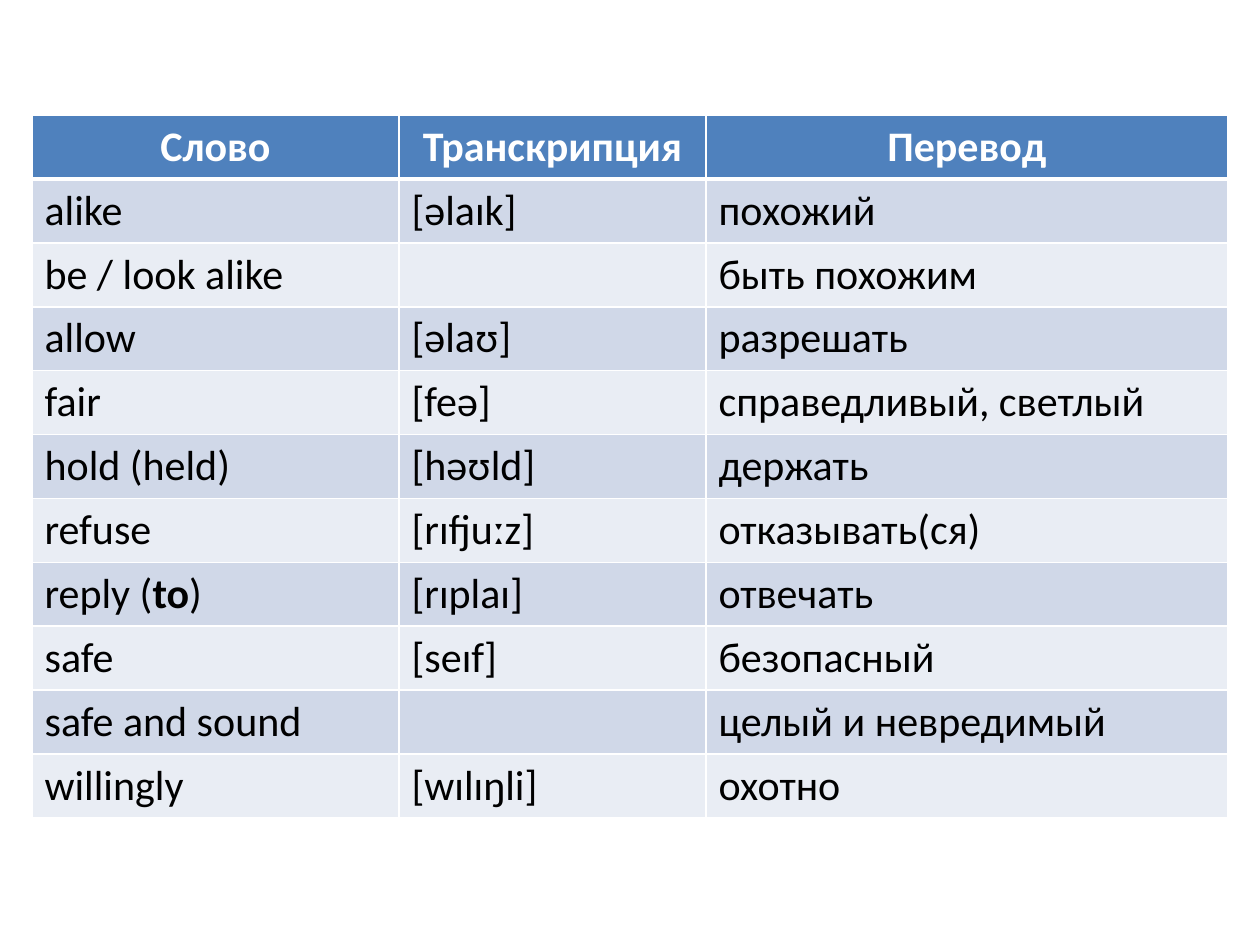
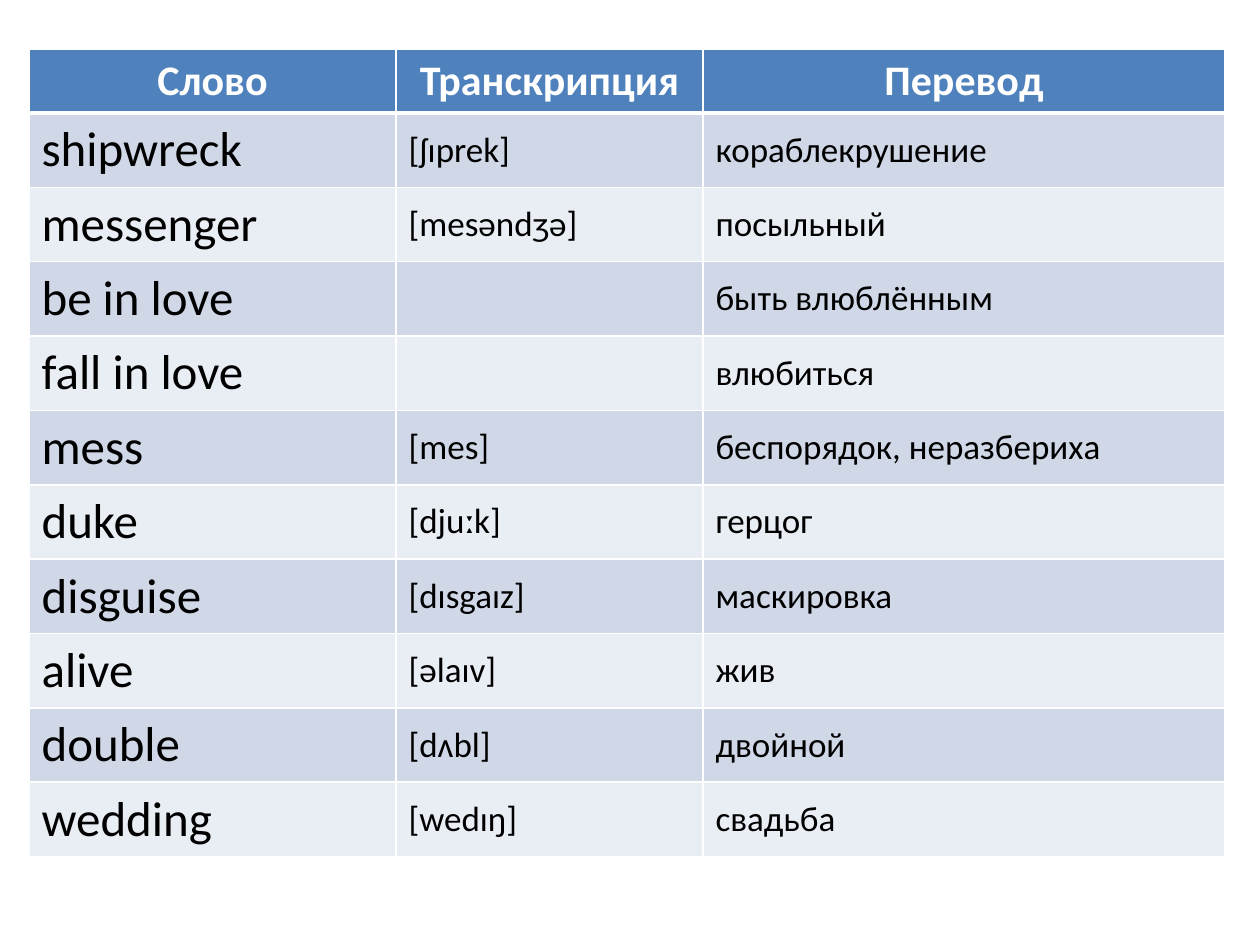
from dataclasses import dataclass

from lxml.etree import SubElement
from pptx import Presentation
from pptx.dml.color import RGBColor as RGB
from pptx.enum.text import MSO_ANCHOR as ANCHOR, PP_ALIGN as ALIGN
from pptx.oxml.ns import qn
from pptx.util import Pt

PX = 914400 // 126
COLUMNS = (367, 307, 522)
HEADINGS = ("Слово", "Транскрипция", "Перевод")
HEADER_HEIGHT = 64


@dataclass(frozen=True)
class Theme:
    """Colours, font and type sizes shared by the slides."""
    font: str = "Calibri"
    header_fill: str = "4F81BD"
    bands: tuple = ("D0D8E8", "E9EDF4")
    white: str = "FFFFFF"
    black: str = "000000"
    normal: int = 24
    large: int = 28
    small: int = 20
    thin: int = 1
    thick: int = 3


THEME = Theme()

ALIKE_WORDS = (
    ("alike", "[əlaɪk]", "похожий"),
    ("be / look alike", "", "быть похожим"),
    ("allow", "[əlaʊ]", "разрешать"),
    ("fair", "[feə]", "справедливый, светлый"),
    ("hold (held)", "[həʊld]", "держать"),
    ("refuse", "[rɪfjuːz]", "отказывать(ся)"),
    ("reply (*to*)", "[rɪplaɪ]", "отвечать"),
    ("safe", "[seɪf]", "безопасный"),
    ("safe and sound", "", "целый и невредимый"),
    ("willingly", "[wɪlɪŋli]", "охотно"),
)
SHIPWRECK_WORDS = (
    ("shipwreck", "[ʃɪprek]", "кораблекрушение"),
    ("messenger", "[mesəndʒə]", "посыльный"),
    ("be in love", "", "быть влюблённым"),
    ("fall in love", "", "влюбиться"),
    ("mess", "[mes]", "беспорядок, неразбериха"),
    ("duke", "[djuːk]", "герцог"),
    ("disguise", "[dɪsgaɪz]", "маскировка"),
    ("alive", "[əlaɪv]", "жив"),
    ("double", "[dʌbl]", "двойной"),
    ("wedding", "[wedɪŋ]", "свадьба"),
)


def add_borders(cell, top, bottom):
    """Draw white cell edges with the given top and bottom widths."""
    tc_pr = cell._tc.get_or_add_tcPr()
    widths = {"lnL": THEME.thin, "lnR": THEME.thin, "lnT": top, "lnB": bottom}
    for tag, width in widths.items():
        ln = SubElement(tc_pr, qn(f"a:{tag}"), w=str(Pt(width)))
        fill = SubElement(ln, qn("a:solidFill"))
        SubElement(fill, qn("a:srgbClr"), val=THEME.white)


def add_run(p, text, size, color, bold):
    """Append one formatted run to a paragraph."""
    r = p.add_run()
    r.text = text
    r.font.name = THEME.font
    r.font.size = Pt(size)
    r.font.bold = bold
    r.font.color.rgb = RGB.from_string(color)


def fill_cell(cell, color):
    """Give a cell a solid fill."""
    cell.fill.solid()
    cell.fill.fore_color.rgb = RGB.from_string(color)


def style_header(cell, text):
    """Format a heading cell and write its text."""
    add_borders(cell, THEME.thin, THEME.thick)
    fill_cell(cell, THEME.header_fill)
    p = cell.text_frame.paragraphs[0]
    p.alignment = ALIGN.CENTER
    add_run(p, text, THEME.normal, THEME.white, True)


def style_body(cell, text, size, row):
    """Format a banded cell; parts between asterisks are bold."""
    add_borders(cell, THEME.thick if row == 1 else THEME.thin, THEME.thin)
    fill_cell(cell, THEME.bands[(row - 1) % 2])
    cell.vertical_anchor = ANCHOR.MIDDLE
    p = cell.text_frame.paragraphs[0]
    for i, part in enumerate(text.split("*")):
        if part:
            add_run(p, part, size, THEME.black, i % 2 == 1)


def add_vocabulary(prs, words, left, top, body_height, sizes):
    """Add a slide with a table of words, transcriptions and translations."""
    slide = prs.slides.add_slide(prs.slide_layouts[6])
    frame = slide.shapes.add_table(
        len(words) + 1, len(COLUMNS), left * PX, top * PX,
        sum(COLUMNS) * PX, (HEADER_HEIGHT + body_height) * PX)
    table = frame.table
    table.horz_banding = False
    for column, width in zip(table.columns, COLUMNS):
        column.width = width * PX
    for row in table.rows:
        row.height = body_height * PX // len(words)
    table.rows[0].height = HEADER_HEIGHT * PX
    for col, heading in enumerate(HEADINGS):
        style_header(table.cell(0, col), heading)
    for row, entry in enumerate(words, start=1):
        for col, (text, size) in enumerate(zip(entry, sizes)):
            style_body(table.cell(row, col), text, size, row)


def main():
    """Build and save the two vocabulary slides."""
    prs = Presentation()
    prs.slide_width, prs.slide_height = 1260 * PX, 945 * PX
    add_vocabulary(prs, ALIKE_WORDS, 32, 115, 639, (THEME.normal,) * 3)
    add_vocabulary(prs, SHIPWRECK_WORDS, 29, 49, 744,
                   (THEME.large, THEME.small, THEME.small))
    prs.save("out.pptx")


if __name__ == "__main__":
    main()
